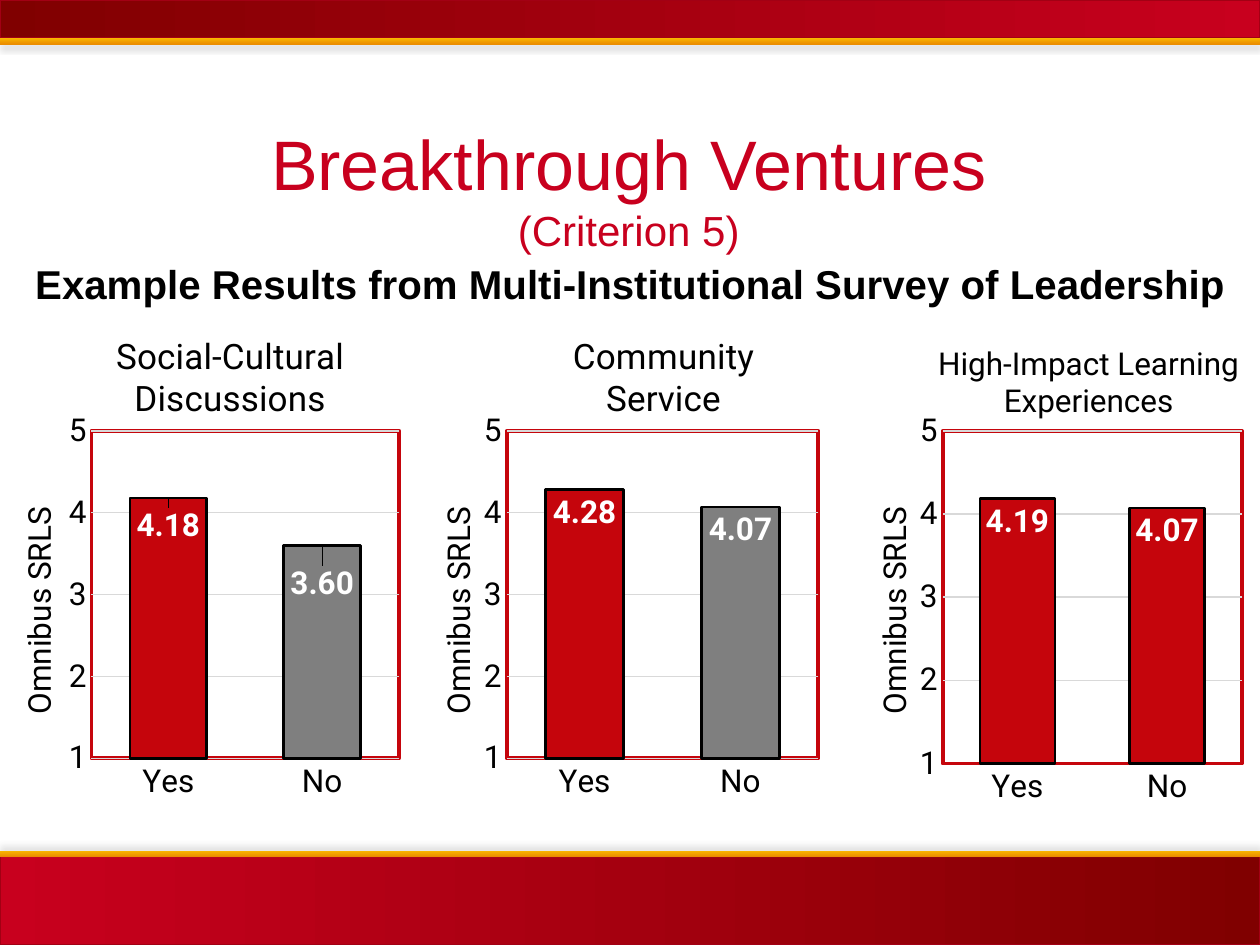
from dataclasses import dataclass
from typing import Optional

from lxml.etree import _Element
from pptx import Presentation
from pptx.chart.chart import Chart
from pptx.chart.data import CategoryChartData
from pptx.dml.color import RGBColor
from pptx.enum.chart import XL_CHART_TYPE, XL_LABEL_POSITION, XL_TICK_MARK
from pptx.enum.shapes import MSO_SHAPE
from pptx.enum.text import MSO_ANCHOR, PP_ALIGN
from pptx.oxml import parse_xml
from pptx.oxml.ns import nsdecls, qn
from pptx.slide import Slide
from pptx.util import Pt


@dataclass(frozen=True)
class Theme:
    heading_font: str = "Arial"
    chart_font: str = "Roboto"
    red: str = "C8001E"
    dark_red: str = "800000"
    band_line: str = "A20014"
    gold: str = "FAB900"
    dark_gold: str = "EB8D00"
    shadow: str = "7F7F7F"
    bar_red: str = "C5050C"
    bar_gray: str = "7F7F7F"
    grid: str = "D9D9D9"
    black: str = "000000"
    white: str = "FFFFFF"
    title_size: int = 40
    criterion_size: int = 24
    heading_size: int = 23
    chart_size: int = 18


THEME = Theme()


@dataclass(frozen=True)
class Band:
    top: float
    height: float
    colors: tuple[str, str]
    angle: int
    line: Optional[str] = None
    shadow_direction: Optional[int] = None


@dataclass(frozen=True)
class SurveyChart:
    """Layout values are fractions of the chart's width and height."""
    title: str
    title_size: int
    title_at: tuple[float, float]
    axis_title_at: tuple[float, float]
    plot: tuple[float, float, float, float]
    values: tuple[float, float]
    colors: tuple[str, str]
    label_drops: tuple[float, ...] = ()
    axis_line: bool = False


REDS = (THEME.red, THEME.dark_red)
GOLDS = (THEME.gold, THEME.dark_gold)
BANDS = [
    Band(489.6, 50.4, REDS, 0, line=THEME.band_line),
    Band(0, 21.6, REDS, 180, line=THEME.band_line),
    Band(21.6, 3.6, GOLDS, 270, shadow_direction=90),
    Band(486, 3.6, GOLDS, 270, shadow_direction=270),
]
YES_NO_COLORS = (THEME.bar_red, THEME.bar_gray)
CHARTS = [
    SurveyChart("Social-Cultural\nDiscussions", 20, (0.27, 0.03), (0.03, 0.37),
                (0.22, 0.23, 0.74, 0.65), (4.18, 3.6), YES_NO_COLORS,
                label_drops=(0.01, 0.03)),
    SurveyChart("Community\nService", 20, (0.35, 0.03), (0.02, 0.37),
                (0.2, 0.23, 0.75, 0.65), (4.28, 4.07), YES_NO_COLORS),
    SurveyChart("High-Impact Learning\nExperiences", 18, (0.21, 0.05), (0.05, 0.37),
                (0.23, 0.23, 0.72, 0.66), (4.19, 4.07), (THEME.bar_red,) * 2,
                axis_line=True),
]
SLIDE_WIDTH = 720
CHART_TOP, CHART_WIDTH, CHART_HEIGHT, CHART_STEP = 180, 237.6, 288, 242


def rgb(color: str) -> RGBColor:
    return RGBColor.from_string(color)


def style_font(font, name: str, size: float, color: str, bold: bool = False) -> None:
    font.name, font.size, font.bold = name, Pt(size), bold
    font.color.rgb = rgb(color)


def draw_band(page: Slide, band: Band) -> None:
    box = page.shapes.add_shape(MSO_SHAPE.RECTANGLE, 0, Pt(band.top),
                                Pt(SLIDE_WIDTH), Pt(band.height))
    box.shadow.inherit = False
    box.fill.gradient()
    box.fill.gradient_angle = band.angle
    for stop, color in zip(box.fill.gradient_stops, band.colors):
        stop.color.rgb = rgb(color)
    if band.line:
        box.line.color.rgb = rgb(band.line)
        box.line.width = Pt(0.75)
    else:
        box.line.fill.background()
    if band.shadow_direction is not None:
        effects = box._element.spPr.find(qn("a:effectLst"))
        effects.append(parse_xml(
            f'<a:outerShdw {nsdecls("a")} blurRad="{Pt(3.1)}" dist="{Pt(2.8)}" '
            f'dir="{band.shadow_direction * 60000}" rotWithShape="0">'
            f'<a:srgbClr val="{THEME.shadow}"><a:alpha val="35000"/></a:srgbClr>'
            '</a:outerShdw>'))


def draw_headings(page: Slide) -> None:
    title = page.shapes.add_textbox(Pt(17.3), Pt(62), Pt(684), Pt(90)).text_frame
    title.word_wrap = True
    title.vertical_anchor = MSO_ANCHOR.MIDDLE
    title.margin_left = title.margin_right = title.margin_top = title.margin_bottom = 0
    para = title.paragraphs[0]
    para.alignment = PP_ALIGN.CENTER
    for text, size in (("Breakthrough Ventures", THEME.title_size),
                       ("(Criterion 5)", THEME.criterion_size)):
        if para.runs:
            para.add_line_break()
        span = para.add_run()
        span.text = text
        style_font(span.font, THEME.heading_font, size, THEME.red)

    heading = page.shapes.add_textbox(Pt(10), Pt(144.7), Pt(701.3), Pt(35.3)).text_frame
    heading.word_wrap = True
    para = heading.paragraphs[0]
    para.text = "Example Results from Multi-Institutional Survey of Leadership"
    para.alignment = PP_ALIGN.CENTER
    style_font(para.font, THEME.heading_font, THEME.heading_size, THEME.black, bold=True)


def place(element: _Element, index: int, x: float, y: float,
          size: Optional[tuple[float, float]] = None, edge: bool = True) -> None:
    """Give a chart part a manual layout, inserted as its child at index."""
    for old in element.findall(qn("c:layout")):
        element.remove(old)
    parts = []
    if size:
        parts.append('<c:layoutTarget val="inner"/>')
    if edge:
        parts.append('<c:xMode val="edge"/><c:yMode val="edge"/>')
    parts.append(f'<c:x val="{x}"/><c:y val="{y}"/>')
    if size:
        parts.append(f'<c:w val="{size[0]}"/><c:h val="{size[1]}"/>')
    element.insert(index, parse_xml(
        f'<c:layout {nsdecls("c")}><c:manualLayout>{"".join(parts)}'
        '</c:manualLayout></c:layout>'))


def write_title(title, text: str, size: float, at: tuple[float, float]) -> None:
    title.text_frame.text = text
    for para in title.text_frame.paragraphs:
        style_font(para.font, THEME.chart_font, size, THEME.black)
    place(title._element, 1, *at)


def frame_plot(chart: Chart, plot: tuple[float, float, float, float]) -> None:
    """Place the plot area, outline it in red and put white behind the chart."""
    body = chart._chartSpace.find(qn("c:chart"))
    area = body.find(qn("c:plotArea"))
    place(area, 0, *plot[:2], size=plot[2:])
    area.append(parse_xml(
        f'<c:spPr {nsdecls("c", "a")}><a:noFill/><a:ln w="{Pt(2.25)}"><a:solidFill>'
        f'<a:srgbClr val="{THEME.bar_red}"/></a:solidFill></a:ln></c:spPr>'))
    body.addnext(parse_xml(
        f'<c:spPr {nsdecls("c", "a")}><a:solidFill><a:srgbClr val="{THEME.white}"/>'
        '</a:solidFill><a:ln><a:noFill/></a:ln></c:spPr>'))


def style_axes(chart: Chart, survey: SurveyChart) -> None:
    for axis in (chart.category_axis, chart.value_axis):
        axis.major_tick_mark = axis.minor_tick_mark = XL_TICK_MARK.NONE
        axis.format.line.fill.background()
        style_font(axis.tick_labels.font, THEME.chart_font, THEME.chart_size, THEME.black)
    if survey.axis_line:
        line = chart.category_axis.format.line
        line.color.rgb, line.width = rgb(THEME.bar_red), Pt(0.75)
    axis = chart.value_axis
    axis.minimum_scale, axis.maximum_scale, axis.major_unit = 1, 5, 1
    axis.tick_labels.number_format = "0"
    axis.tick_labels.number_format_is_linked = False
    grid = axis.major_gridlines.format.line
    grid.color.rgb, grid.width = rgb(THEME.grid), Pt(0.75)
    write_title(axis.axis_title, "Omnibus SRLS", THEME.chart_size, survey.axis_title_at)
    frame = axis.axis_title._element.find(".//" + qn("a:bodyPr"))
    frame.set("rot", "-5400000")
    frame.set("vert", "horz")


def style_bars(chart: Chart, survey: SurveyChart) -> None:
    plot = chart.plots[0]
    plot.gap_width, plot.overlap, plot.vary_by_categories = 100, -27, False
    series = plot.series[0]
    series.format.fill.solid()
    series.format.fill.fore_color.rgb = rgb(THEME.bar_red)
    series.format.line.color.rgb = rgb(THEME.black)
    series.format.line.width = Pt(1.5)
    for index, color in enumerate(survey.colors):
        point = series.points[index].format
        point.fill.solid()
        point.fill.fore_color.rgb = rgb(color)
        point.line.color.rgb = rgb(THEME.black)
        point.line.width = Pt(1.5)
    labels = series.data_labels
    labels.show_value = True
    labels.number_format, labels.number_format_is_linked = "0.00", False
    labels.position = XL_LABEL_POSITION.INSIDE_END
    style_font(labels.font, THEME.chart_font, THEME.chart_size, THEME.white, bold=True)
    for index, drop in enumerate(survey.label_drops):
        label = series.points[index].data_label
        style_font(label.font, THEME.chart_font, THEME.chart_size, THEME.white, bold=True)
        label.position = XL_LABEL_POSITION.INSIDE_END
        element = series._element.xpath("c:dLbls/c:dLbl")[index]
        place(element, 1, 0, drop, edge=False)
        element.insert(2, parse_xml(
            f'<c:numFmt {nsdecls("c")} formatCode="0.00" sourceLinked="0"/>'))


def draw_chart(page: Slide, survey: SurveyChart, left: float) -> None:
    data = CategoryChartData()
    data.categories = ["Yes", "No"]
    data.add_series("Series 1", survey.values)
    chart = page.shapes.add_chart(
        XL_CHART_TYPE.COLUMN_CLUSTERED, Pt(left), Pt(CHART_TOP),
        Pt(CHART_WIDTH), Pt(CHART_HEIGHT), data).chart
    chart.has_legend = False
    style_font(chart.font, THEME.chart_font, THEME.chart_size, THEME.black)
    write_title(chart.chart_title, survey.title, survey.title_size, survey.title_at)
    style_axes(chart, survey)
    style_bars(chart, survey)
    frame_plot(chart, survey.plot)


def main() -> None:
    deck = Presentation()
    deck.slide_width, deck.slide_height = Pt(SLIDE_WIDTH), Pt(540)
    page = deck.slides.add_slide(deck.slide_layouts[6])
    for band in BANDS:
        draw_band(page, band)
    draw_headings(page)
    for index, survey in enumerate(CHARTS):
        draw_chart(page, survey, index * CHART_STEP)
    deck.save("out.pptx")


if __name__ == "__main__":
    main()
